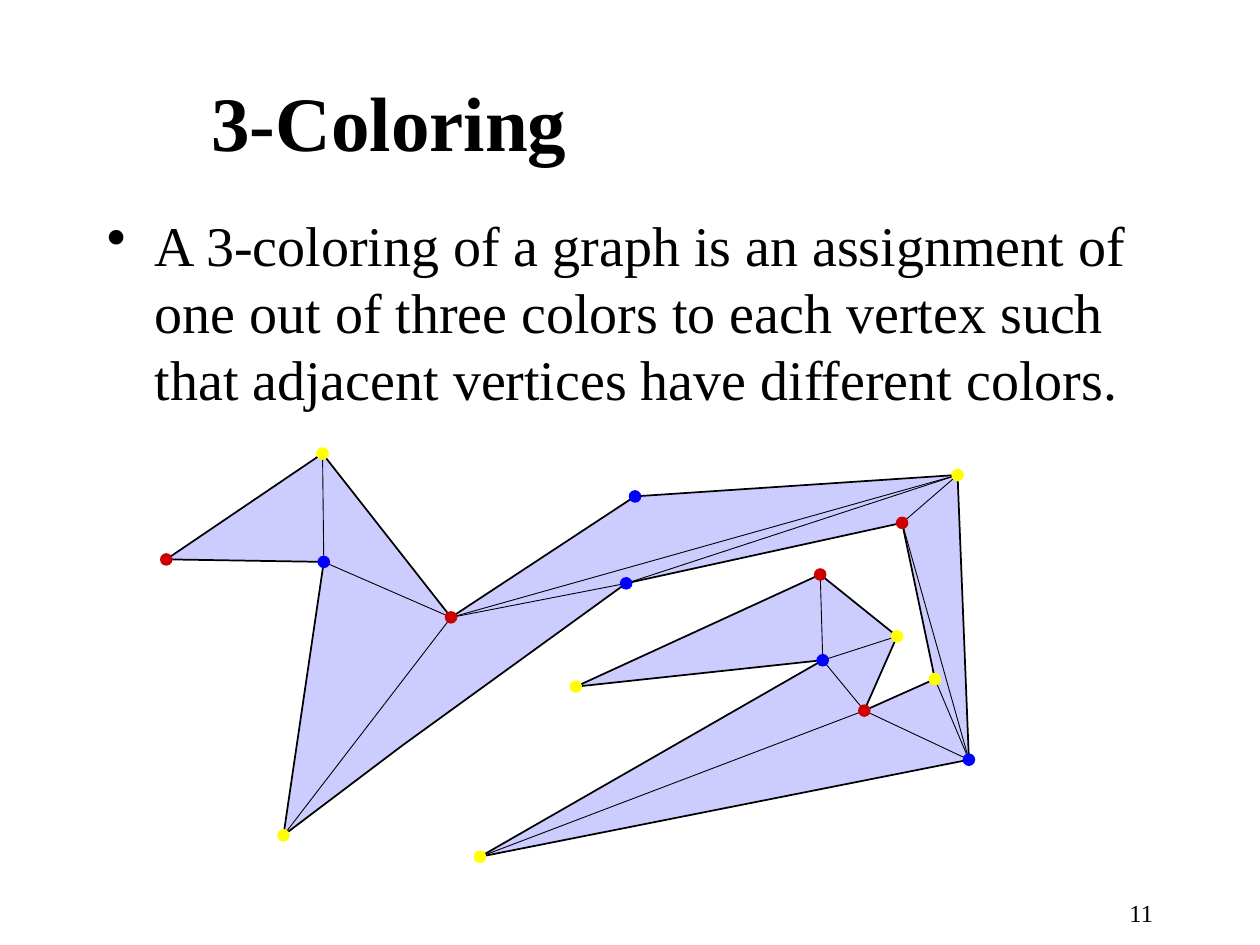
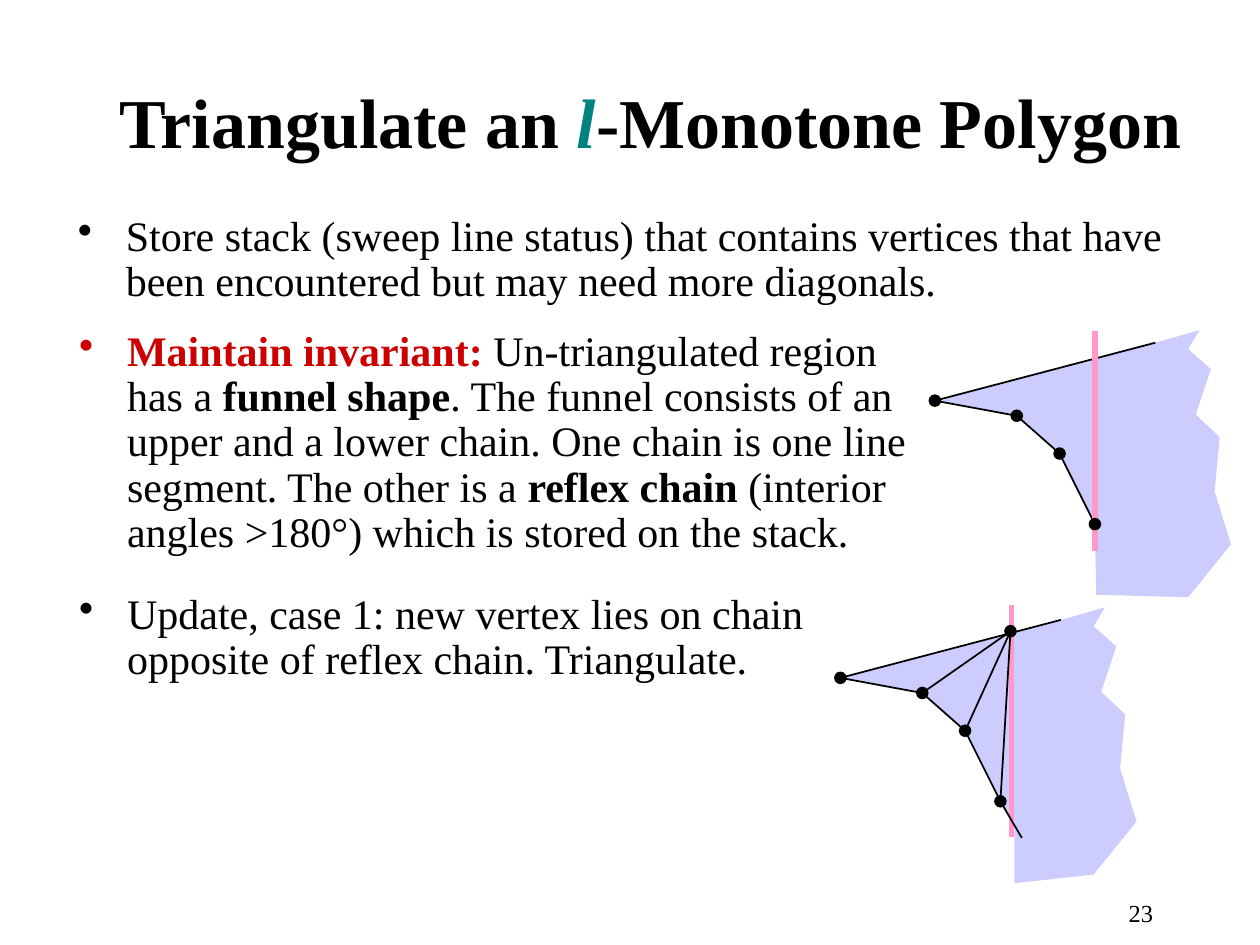
import lxml.etree
import pptx
import pptx.dml.color
import pptx.enum.shapes
import pptx.enum.text
import pptx.oxml.ns
import pptx.util

PX = 9144
FONT = "Times New Roman"
DOT = 10
INDENT = 38
COLORS = {"black": "000000", "red": "CC0000", "blue": "0000FF", "yellow": "FFFF00",
          "lilac": "CCCCFF", "pink": "FF99CC", "teal": "008380"}


def rgb(name):
    return pptx.dml.color.RGBColor.from_string(COLORS[name])


def add_text(s, box, size, runs, bullet=False, spacing=None):
    tf = s.shapes.add_textbox(*[v * PX for v in box]).text_frame
    tf.word_wrap = True
    p = tf.paragraphs[0]
    for text, color, style in runs:
        r = p.add_run()
        r.text = text
        r.font.name = FONT
        r.font.size = pptx.util.Pt(size)
        r.font.color.rgb = rgb(color)
        r.font.bold = "b" in style
        r.font.italic = "i" in style
    if spacing:
        p.line_spacing = spacing
    if bullet:
        p.space_before = pptx.util.Pt(size * 0.2)
        pPr = p._p.get_or_add_pPr()
        pPr.set("marL", str(INDENT * PX))
        pPr.set("indent", str(-INDENT * PX))
        bu = lxml.etree.SubElement(pPr, pptx.oxml.ns.qn("a:buChar"))
        bu.set("char", "•")
    return tf


vertices = {
    "a": (132, 444, "red"), "b": (256, 360, "yellow"), "c": (358, 490, "red"),
    "d": (504, 394, "blue"), "e": (760, 377, "yellow"), "f": (769, 603, "blue"),
    "g": (381, 680, "yellow"), "h": (653, 524, "blue"), "i": (457, 545, "yellow"),
    "j": (651, 456, "red"), "k": (712, 505, "yellow"), "l": (686, 564, "red"),
    "m": (742, 539, "yellow"), "n": (716, 415, "red"), "o": (497, 463, "blue"),
    "p": (319, 592, None), "q": (225, 663, "yellow"), "r": (257, 446, "blue"),
}
diagonals = "br rc cq co ce oe ne nf mf lf lg hl hk jh".split()

chain = [(742, 318), (807, 330), (841, 360), (869, 416)]
torn_edge = [(977, 432), (964, 390), (968, 347), (949, 329), (961, 293), (943, 277),
             (952, 262), (917, 272)]
funnels, funnel_lines, funnel_dots = [], [], []
for dx, dy, sweep_x, sweep_top, sweep_bottom, tail in [
        (0, 0, 869, 263, 437, [(870, 472), (943, 474)]),
        (-75, 220, 803, 480, 664, [(805, 652), (805, 701), (868, 694)])]:
    stack = [(x + dx, y + dy) for x, y in chain]
    edge = [(x + dx, y + dy) for x, y in torn_edge]
    funnels.append(edge + stack + tail)
    funnel_lines += [("black", 1, *ends) for ends in zip(stack, stack[1:])]
    funnel_lines += [("black", 1, stack[0], edge[-1]),
                     ("pink", 3, (sweep_x, sweep_top), (sweep_x, sweep_bottom))]
    funnel_dots += [(x, y, "black") for x, y in stack]

new_vertex = (802, 501)
funnel_lines += [("black", 1, new_vertex, v) for v in stack[1:]]
funnel_lines.append(("black", 1, stack[-1], (811, 665)))
funnel_dots.append((*new_vertex, "black"))

slides = [
    {
        "number": "11",
        "title": ((158, 33, 825, 125), 44, [("3-Coloring", "black", "b")]),
        "bullets": [
            ((75, 162, 850, 182), 32, [
                ("A 3-coloring of a graph is an assignment of one out of three colors to each "
                 "vertex such that adjacent vertices have different colors.", "black", "")]),
        ],
        "spacing": None,
        "outline": True,
        "polygons": [[v[:2] for v in vertices.values()]],
        "lines": [("black", 0.5, vertices[u][:2], vertices[v][:2]) for u, v in diagonals],
        "dots": [v for v in vertices.values() if v[2]],
    },
    {
        "number": "23",
        "title": ((85, 33, 869, 125), 40, [
            ("Triangulate an ", "black", "b"), ("l", "teal", "bi"),
            ("-Monotone Polygon", "black", "b")]),
        "bullets": [
            ((52, 166, 897, 91), 24, [
                ("Store stack (sweep line status) that contains vertices that have been "
                 "encountered but may need more diagonals.", "black", "")]),
            ((53, 257, 679, 200), 24, [
                ("Maintain invariant:", "red", "b"),
                (" Un-triangulated region has a ", "black", ""),
                ("funnel shape", "black", "b"),
                (". The funnel consists of an upper and a lower chain. One chain is one line "
                 "segment. The other is a ", "black", ""),
                ("reflex chain", "black", "b"),
                (" (interior angles >180°) which is stored on the stack.", "black", "")]),
            ((53, 466, 679, 138), 24, [
                ("Update, case 1: new vertex lies on chain opposite of reflex chain. "
                 "Triangulate.", "black", "")]),
        ],
        "spacing": 0.9,
        "outline": False,
        "polygons": funnels,
        "lines": funnel_lines,
        "dots": funnel_dots,
    },
]

prs = pptx.Presentation()
prs.slide_width = 1000 * PX
prs.slide_height = 750 * PX

for content in slides:
    s = prs.slides.add_slide(prs.slide_layouts[6])
    tf = add_text(s, (843, 708, 82, 25), 14, [(content["number"], "black", "")])
    tf.paragraphs[0].alignment = pptx.enum.text.PP_ALIGN.RIGHT

    for points in content["polygons"]:
        builder = s.shapes.build_freeform(*points[0], scale=PX)
        builder.add_line_segments(points[1:], close=True)
        sp = builder.convert_to_shape()
        sp.shadow.inherit = False
        sp.fill.solid()
        sp.fill.fore_color.rgb = rgb("lilac")
        if content["outline"]:
            sp.line.color.rgb = rgb("black")
            sp.line.width = pptx.util.Pt(1)
        else:
            sp.line.fill.background()

    tf = add_text(s, *content["title"])
    tf.vertical_anchor = pptx.enum.text.MSO_ANCHOR.MIDDLE
    for box, size, runs in content["bullets"]:
        add_text(s, box, size, runs, bullet=True, spacing=content["spacing"])

    for color, width, start, end in content["lines"]:
        line = s.shapes.add_connector(pptx.enum.shapes.MSO_CONNECTOR.STRAIGHT,
                                      *[v * PX for v in start + end])
        line.line.color.rgb = rgb(color)
        line.line.width = pptx.util.Pt(width)
        lxml.etree.SubElement(line._element.spPr, pptx.oxml.ns.qn("a:effectLst"))

    for x, y, color in content["dots"]:
        sp = s.shapes.add_shape(pptx.enum.shapes.MSO_SHAPE.OVAL,
                                (x - DOT // 2) * PX, (y - DOT // 2) * PX, DOT * PX, DOT * PX)
        sp.shadow.inherit = False
        sp.fill.solid()
        sp.fill.fore_color.rgb = rgb(color)
        sp.line.fill.background()

prs.save("out.pptx")
